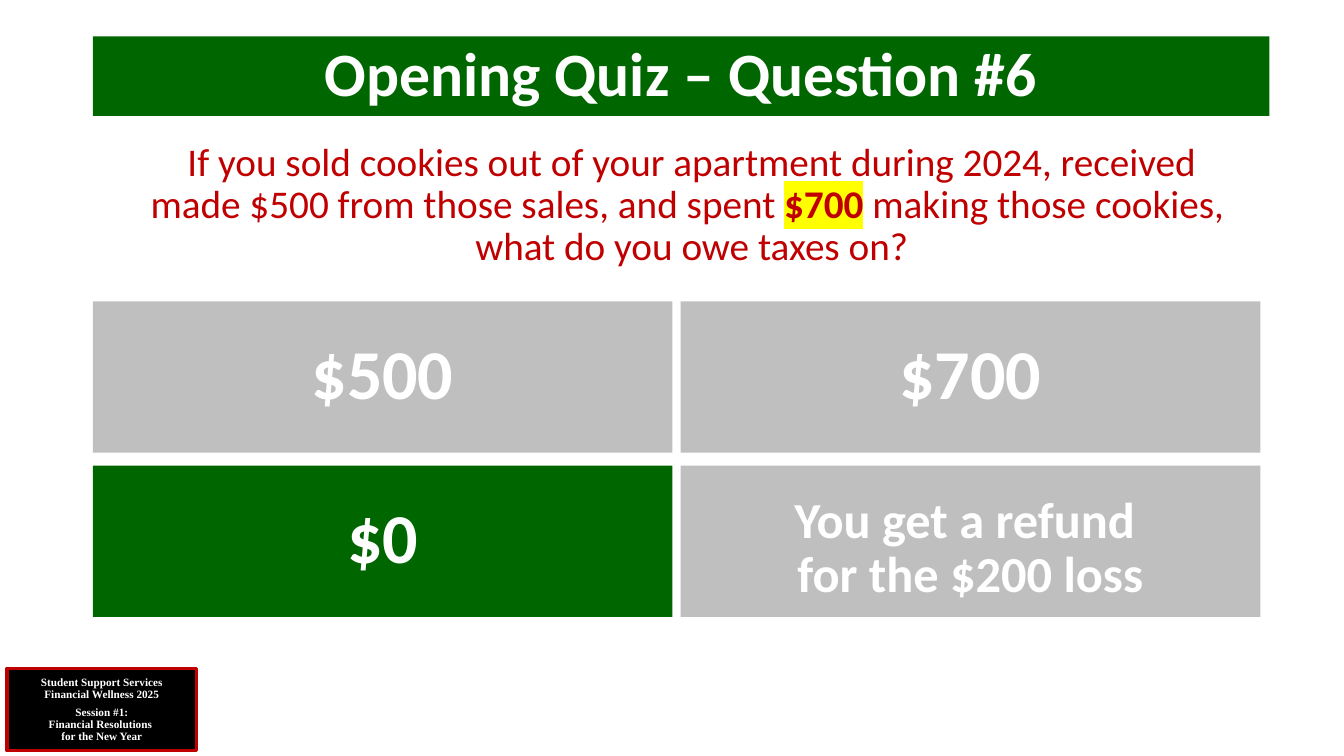
"""Build the quiz slide with a question, four answers and a session badge."""
from dataclasses import dataclass

from lxml import etree
from pptx import Presentation
from pptx.dml.color import RGBColor
from pptx.enum.shapes import MSO_SHAPE
from pptx.enum.text import MSO_ANCHOR, MSO_AUTO_SIZE, PP_ALIGN
from pptx.oxml.ns import qn
from pptx.util import Emu, Pt

RECTANGLE = MSO_SHAPE.RECTANGLE
TOP, MIDDLE = MSO_ANCHOR.TOP, MSO_ANCHOR.MIDDLE
CENTER = PP_ALIGN.CENTER
NO_AUTOFIT = MSO_AUTO_SIZE.NONE
EMU_PER_PX = 9144
TITLE_AND_CONTENT = 1


@dataclass(frozen=True)
class Theme:
    body_font: str = "Calibri"
    badge_font: str = "Times New Roman"
    green: str = "006600"
    red: str = "C00000"
    gray: str = "BFBFBF"
    white: str = "FFFFFF"
    black: str = "000000"
    yellow: str = "FFFF00"
    title_size: int = 44
    question_size: int = 28
    answer_size: int = 50
    long_answer_size: int = 36
    badge_size: int = 8
    badge_line: float = 2.25
    badge_gap: int = 4
    line_spacing: float = 0.9


THEME = Theme()


@dataclass(frozen=True)
class Box:
    left: int
    top: int
    width: int
    height: int


@dataclass(frozen=True)
class Span:
    text: str
    bold: bool = True
    highlight: str | None = None


@dataclass(frozen=True)
class Answer:
    text: str
    fill: str = THEME.gray
    size: int = THEME.answer_size
    inset_top: int = 5


SLIDE = Box(0, 0, 1333, 750)
TITLE = Box(92, 36, 1167, 79)
QUESTION = Box(92, 136, 1188, 540)
BADGE = Box(7, 663, 188, 82)
FIRST_ANSWER = Box(92, 299, 575, 150)
COLUMN_GAP, ROW_GAP, COLUMNS = 8, 13, 2

QUESTION_SPANS = [
    Span("If you sold cookies out of your apartment during 2024, received\n"
         "made $500 from those sales, and spent ", bold=False),
    Span("$700", highlight=THEME.yellow),
    Span(" making those cookies, \nwhat do you owe taxes on?", bold=False),
]
ANSWERS = [
    Answer("$500"),
    Answer("$700"),
    Answer("$0", fill=THEME.green),
    Answer("You get a refund \nfor the $200 loss",
           size=THEME.long_answer_size, inset_top=21),
]
BADGE_PARAGRAPHS = [
    [Span("Student Support Services\nFinancial Wellness 2025")],
    [Span("Session #1:\nFinancial Resolutions \nfor the New Year")],
]


def px(value: int) -> Emu:
    """Convert pixels to EMU."""
    return Emu(value * EMU_PER_PX)


def place(shape, box: Box) -> None:
    """Move and size a shape."""
    shape.left, shape.top = px(box.left), px(box.top)
    shape.width, shape.height = px(box.width), px(box.height)


def fill_solid(shape, color: str) -> None:
    """Give a shape a plain fill."""
    shape.fill.solid()
    shape.fill.fore_color.rgb = RGBColor.from_string(color)


def add_highlight(run, color: str) -> None:
    """Mark a coloured run with a highlight."""
    text_fill = run.font._element.find(qn("a:solidFill"))
    highlight = etree.Element(qn("a:highlight"))
    etree.SubElement(highlight, qn("a:srgbClr"), val=color)
    text_fill.addnext(highlight)


def write_text(shape, paragraphs: list[list[Span]], *, size: int,
               color: str = THEME.white, font: str = THEME.body_font,
               anchor=MIDDLE, gap: int = 0, inset_top: int = 5) -> None:
    """Write centred paragraphs of formatted spans into a shape."""
    frame = shape.text_frame
    frame.word_wrap = True
    frame.auto_size = NO_AUTOFIT
    frame.vertical_anchor = anchor
    frame.margin_top, frame.margin_bottom = px(inset_top), px(5)
    for index, spans in enumerate(paragraphs):
        paragraph = frame.add_paragraph() if index else frame.paragraphs[0]
        paragraph.alignment = CENTER
        paragraph.line_spacing = THEME.line_spacing
        paragraph.space_before = Pt(gap if index else 0)
        for span in spans:
            for line_index, line in enumerate(span.text.split("\n")):
                if line_index:
                    paragraph.add_line_break()
                run = paragraph.add_run()
                run.text = line
                run.font.size = Pt(size)
                run.font.bold = span.bold
                run.font.color.rgb = RGBColor.from_string(color)
                if span.highlight:
                    add_highlight(run, span.highlight)
                run.font.name = font


def remove_bullet(paragraph) -> None:
    """Clear the bullet and indent of a paragraph."""
    properties = paragraph._p.get_or_add_pPr()
    properties.set("marL", "0")
    properties.set("indent", "0")
    etree.SubElement(properties, qn("a:buNone"))


def add_panel(slide, box: Box, fill: str):
    """Add a plain rectangle without outline or shadow."""
    panel = slide.shapes.add_shape(RECTANGLE, 0, 0, 0, 0)
    place(panel, box)
    fill_solid(panel, fill)
    panel.line.fill.background()
    panel.shadow.inherit = False
    return panel


def add_answers(slide, answers: list[Answer]) -> None:
    """Lay the answers out in a grid."""
    first = FIRST_ANSWER
    for index, answer in enumerate(answers):
        row, column = divmod(index, COLUMNS)
        box = Box(first.left + column * (first.width + COLUMN_GAP),
                  first.top + row * (first.height + ROW_GAP),
                  first.width, first.height)
        panel = add_panel(slide, box, answer.fill)
        write_text(panel, [[Span(answer.text)]], size=answer.size,
                   inset_top=answer.inset_top)


def main() -> None:
    """Build and save the presentation."""
    presentation = Presentation()
    presentation.slide_width = px(SLIDE.width)
    presentation.slide_height = px(SLIDE.height)
    layout = presentation.slide_layouts[TITLE_AND_CONTENT]
    slide = presentation.slides.add_slide(layout)

    title = slide.shapes.title
    place(title, TITLE)
    fill_solid(title, THEME.green)
    write_text(title, [[Span("Opening Quiz – Question #6")]],
               size=THEME.title_size)

    question = slide.placeholders[1]
    place(question, QUESTION)
    remove_bullet(question.text_frame.paragraphs[0])
    write_text(question, [QUESTION_SPANS], size=THEME.question_size,
               color=THEME.red, anchor=TOP)

    add_answers(slide, ANSWERS)

    badge = add_panel(slide, BADGE, THEME.black)
    badge.line.color.rgb = RGBColor.from_string(THEME.red)
    badge.line.width = Pt(THEME.badge_line)
    write_text(badge, BADGE_PARAGRAPHS, size=THEME.badge_size,
               font=THEME.badge_font, gap=THEME.badge_gap)

    presentation.save("out.pptx")


if __name__ == "__main__":
    main()
